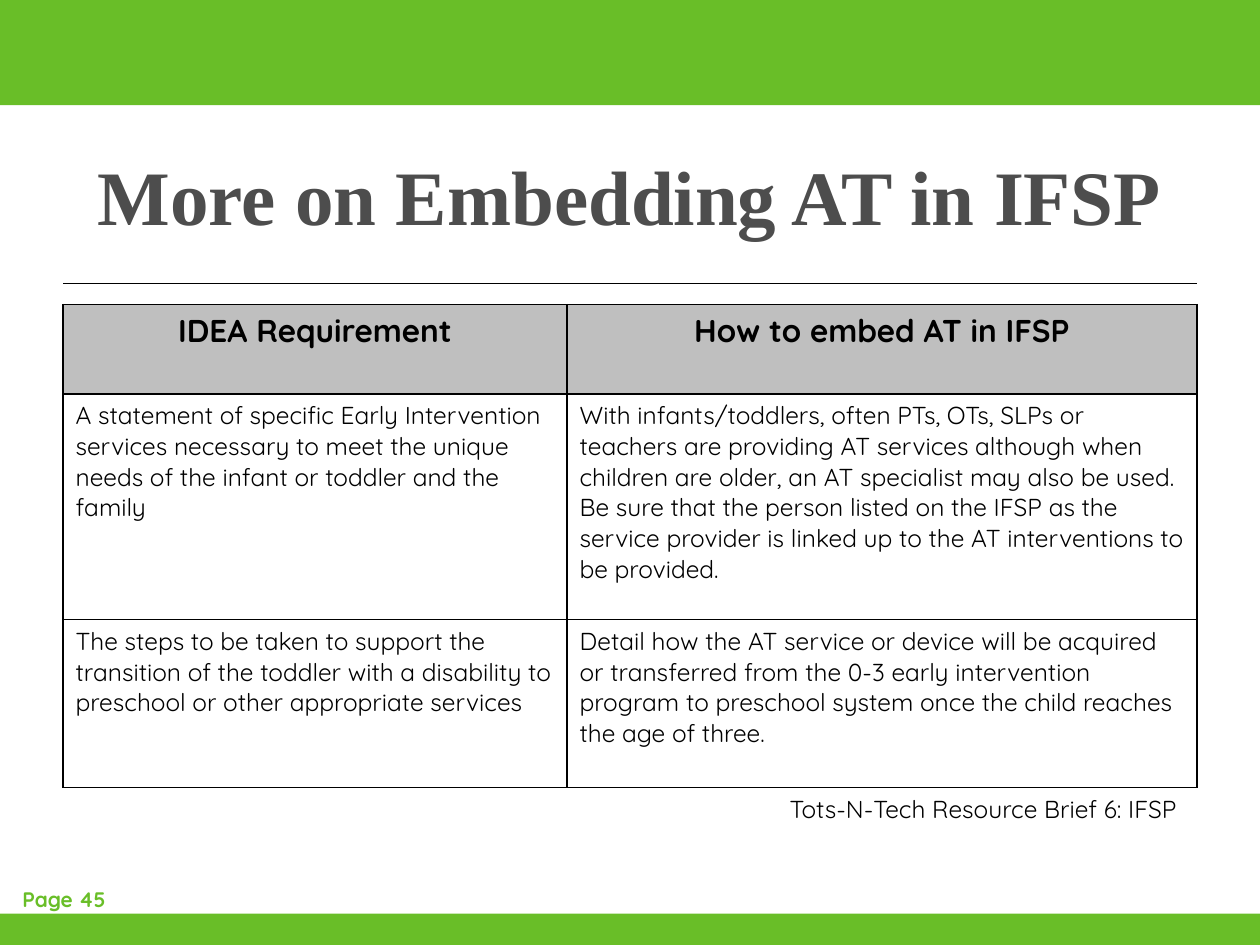
from lxml.etree import SubElement as Sub
from pptx import Presentation
from pptx.dml.color import RGBColor as RGB
from pptx.enum.shapes import MSO_CONNECTOR as LINK, MSO_SHAPE as SHAPE
from pptx.enum.text import MSO_ANCHOR as ANCHOR, PP_ALIGN as ALIGN
from pptx.oxml.ns import qn
from pptx.util import Cm, Pt

GREEN, BLACK, GREY, WHITE = "69BE28", "000000", "BFBFBF", "FFFFFF"
SANS = "Quicksand"


def tint(fill, color):
    fill.solid()
    fill.fore_color.rgb = RGB.from_string(color)


def write(frame, text, form, color=BLACK, align=ALIGN.LEFT):
    """Put one run of text in the frame, with font values from form."""
    para = frame.paragraphs[0]
    para.alignment = align
    run = para.add_run()
    run.text = text
    for key, value in form.items():
        setattr(run.font, key, value)
    tint(run.font.fill, color)


deck = Presentation()
deck.slide_width, deck.slide_height = Cm(25.4), Cm(19.05)
slide = deck.slides.add_slide(deck.slide_layouts[6])
shapes = slide.shapes

# Green bands and the rule under the title
for top, high in ((0, 2.12), (18.42, 0.63)):
    band = shapes.add_shape(SHAPE.RECTANGLE, 0, Cm(top), Cm(25.4), Cm(high))
    band.shadow.inherit = False
    tint(band.fill, GREEN)
    band.line.fill.background()

rule = shapes.add_connector(LINK.STRAIGHT, Cm(1.27), Cm(5.72), Cm(24.13), Cm(5.72))
tint(rule.line.fill, BLACK)
rule.line.width = Pt(0.75)
Sub(rule.element.spPr, qn("a:effectLst"))

# Title, page number and reference
head = {"name": "Times New Roman", "size": Pt(44), "bold": True}
page = {"name": SANS, "size": Pt(12), "bold": True}
body = {"name": SANS, "size": Pt(14), "bold": False}
texts = (
    ("More on Embedding AT in IFSP", (1.27, 2.12, 22.86, 3.6),
     head, "4D4D4D", ALIGN.CENTER, ANCHOR.MIDDLE, True),
    ("Page 45", (0.2, 17.75, 13.97, 0.86),
     page, GREEN, ALIGN.LEFT, ANCHOR.TOP, True),
    ("Tots-N-Tech Resource Brief 6: IFSP", (15.67, 15.88, 8.36, 0.86),
     body, BLACK, ALIGN.LEFT, ANCHOR.TOP, False),
)
for text, place, form, color, align, anchor, wrap in texts:
    frame = shapes.add_textbox(*map(Cm, place)).text_frame
    frame.word_wrap = wrap
    frame.vertical_anchor = anchor
    write(frame, text, form, color, align)

# Table of requirements
rows = (
    ("IDEA Requirement", "How to embed AT in IFSP"),
    ("A statement of specific Early Intervention services necessary to meet "
     "the unique needs of the infant or toddler and the family",
     "With infants/toddlers, often PTs, OTs, SLPs or teachers are providing "
     "AT services although when children are older, an AT specialist may also "
     "be used. Be sure that the person listed on the IFSP as the service "
     "provider is linked up to the AT interventions to be provided."),
    ("The steps to be taken to support the transition of the toddler with a "
     "disability to preschool or other appropriate services",
     "Detail how the AT service or device will be acquired or transferred from "
     "the 0-3 early intervention program to preschool system once the child "
     "reaches the age of three."),
)
table = shapes.add_table(3, 2, Cm(1.27), Cm(6.14), Cm(22.86), Cm(9.73)).table
for col, wide in zip(table.columns, (10.16, 12.7)):
    col.width = Cm(wide)
for row, high in zip(table.rows, (1.8, 4.55, 3.38)):
    row.height = Cm(high)

label = {"name": SANS, "size": Pt(18), "bold": True}
for r, row in enumerate(rows):
    form, fill, align = (body, WHITE, ALIGN.LEFT) if r else (label, GREY, ALIGN.CENTER)
    for c, text in enumerate(row):
        cell = table.cell(r, c)
        write(cell.text_frame, text, form, BLACK, align)
        props = cell._tc.get_or_add_tcPr()
        for side in ("lnL", "lnR", "lnT", "lnB"):
            edge = Sub(props, qn(f"a:{side}"), w=str(Pt(1)))
            Sub(Sub(edge, qn("a:solidFill")), qn("a:srgbClr"), val=BLACK)
        tint(cell.fill, fill)

deck.save("out.pptx")
